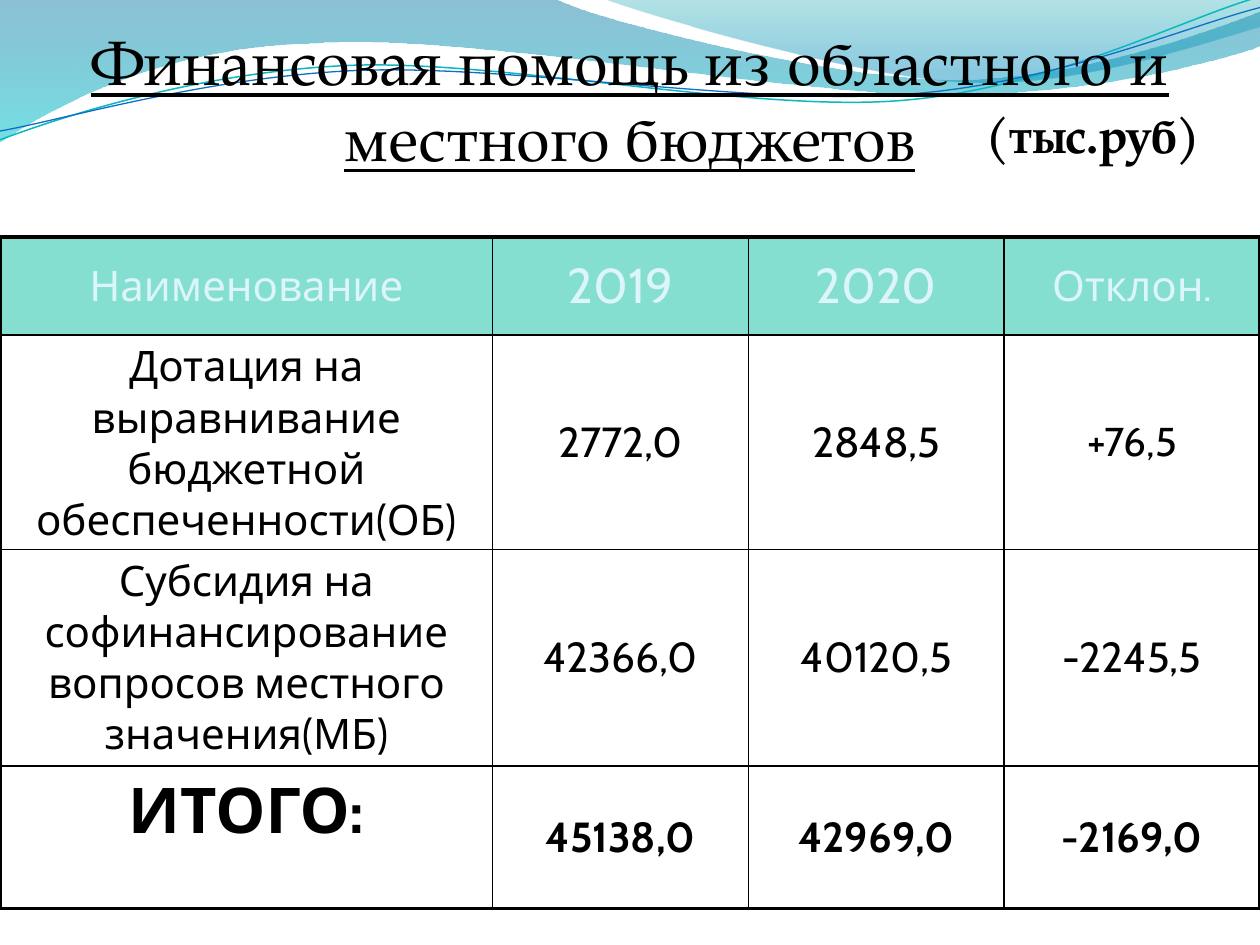
import pptx
import pptx.dml.color
import pptx.enum.text
import pptx.oxml
import pptx.oxml.ns
import pptx.util
from pptx.util import Inches, Pt

SERIF, SANS = "TeX Gyre Pagella", "Cabin"
TITLE = "Финансовая помощь из областного и местного бюджетов"
UNITS = "(тыс.руб)"
COLUMN_WIDTHS = [3.91, 2.03, 2.03, 2.03]
ROW_HEIGHTS = [0.78, 1.70, 1.72, 1.13]
ROWS = [
    ["Наименование", "2019", "2020", "Отклон."],
    ["Дотация на выравнивание бюджетной обеспеченности(ОБ)", "2772,0", "2848,5", "+76,5"],
    ["Субсидия на софинансирование вопросов местного значения(МБ)", "42366,0", "40120,5", "-2245,5"],
    ["ИТОГО:", "45138,0", "42969,0", "-2169,0"],
]
SPECIAL_SIZES = {(0, 1): 28, (0, 2): 28, (1, 3): 23, (3, 0): 36}

# Outlines: a pair is a corner, six numbers are a Bezier segment.
# Gradient stops: position, colour, opacity in percent.
BANDS = [
    ([(0, 0), (4.4, -0.01), (4.76, 0.17, 6.64, 0.63, 7.58, 0.63),
      (8.53, 0.63, 9.58, 0.26, 10, 0.09), (10.01, 0.36),
      (9.83, 0.44, 8.7, 0.76, 7.46, 0.75), (6.22, 0.75, 3.82, 0.28, 2.57, 0.34),
      (1.29, 0.36, 0.46, 0.83, -0.01, 1.13), (0, 0)],
     [(0, "0074A1", 45), (1, "00C6CF", 55)]),
    ([(4.79, -0.01), (5.09, 0.11, 6.82, 0.62, 7.69, 0.65),
      (8.56, 0.69, 9.61, 0.32, 10, 0.21), (10, 0), (4.79, -0.01)],
     [(0, "00A1A9", 30), (0.8, "008BBF", 45)]),
]
STRANDS = [
    ([(0, 1.11), (0.48, 0.93, 1.58, 0.57, 2.77, 0.52), (3.95, 0.47, 5.93, 0.89, 7.13, 0.8),
      (8.33, 0.71, 9.38, 0.15, 9.98, -0.02)], "0AB8BF", 0.85),
    ([(0, 1.04), (0.47, 0.96, 1.64, 0.61, 2.83, 0.56), (4.03, 0.51, 5.97, 0.84, 7.17, 0.75),
      (8.36, 0.67, 9.41, 0.21, 10, 0.06)], "0F6FC6", 0.75),
]


def rgb(value):
    return pptx.dml.color.RGBColor.from_string(value)


def add_curve(slide, outline, close):
    """Build a freeform on all points, then join each three of a segment to a Bezier."""
    points = [(round(segment[i] * 1000), round(segment[i + 1] * 1000))
              for segment in outline for i in range(0, len(segment), 2)]
    builder = slide.shapes.build_freeform(*points[0], scale=Inches(1) / 1000)
    builder.add_line_segments(points[1:], close=close)
    shape = builder.convert_to_shape()
    shape.shadow.inherit = False
    lines = iter(list(shape._element.iter(pptx.oxml.ns.qn("a:lnTo"))))
    for segment in outline[1:]:
        first = next(lines)
        if len(segment) == 6:
            curve = pptx.oxml.parse_xml(f'<a:cubicBezTo {pptx.oxml.ns.nsdecls("a")}/>')
            first.addprevious(curve)
            for line in (first, next(lines), next(lines)):
                curve.append(line[0])
                line.getparent().remove(line)
    return shape


def add_band(slide, outline, stops):
    shape = add_curve(slide, outline, True)
    shape.line.fill.background()
    shape.fill.gradient()
    shape.fill.gradient_angle = 270
    for stop, (position, color, _) in zip(shape.fill.gradient_stops, stops):
        stop.position = position
        stop.color.rgb = rgb(color)
    colors = list(shape._element.spPr.iter(pptx.oxml.ns.qn("a:srgbClr")))
    for element, (_, _, opacity) in zip(colors, stops):
        element.append(pptx.oxml.parse_xml(
            f'<a:alpha {pptx.oxml.ns.nsdecls("a")} val="{opacity * 1000}"/>'))


def add_strand(slide, outline, color, width):
    shape = add_curve(slide, outline, False)
    shape.fill.background()
    shape.line.color.rgb = rgb(color)
    shape.line.width = Pt(width)


def style_text(frame, text, font, size, color="000000", bold=False, underline=False):
    frame.word_wrap = True
    paragraph = frame.paragraphs[0]
    paragraph.text = text
    paragraph.alignment = pptx.enum.text.PP_ALIGN.CENTER
    paragraph.font.name = font
    paragraph.font.size = Pt(size)
    paragraph.font.color.rgb = rgb(color)
    paragraph.font.bold = bold
    paragraph.font.underline = underline


def add_text(slide, box, text, size, **style):
    shape = slide.shapes.add_textbox(*map(Inches, box))
    style_text(shape.text_frame, text, SERIF, size, **style)


def set_borders(cell, widths):
    properties = cell._tc.get_or_add_tcPr()
    for side, width in widths.items():
        properties.append(pptx.oxml.parse_xml(
            f'<a:ln{side} {pptx.oxml.ns.nsdecls("a")} w="{Pt(width)}"><a:solidFill>'
            f'<a:srgbClr val="000000"/></a:solidFill></a:ln{side}>'))


def add_budget_table(slide):
    last_row, last_column = len(ROWS) - 1, len(COLUMN_WIDTHS) - 1
    table = slide.shapes.add_table(
        len(ROWS), len(COLUMN_WIDTHS), 0, Inches(1.88),
        Inches(sum(COLUMN_WIDTHS)), Inches(sum(ROW_HEIGHTS))).table
    table.first_row = table.horz_banding = False
    for column, width in zip(table.columns, COLUMN_WIDTHS):
        column.width = Inches(width)
    for row, height in zip(table.rows, ROW_HEIGHTS):
        row.height = Inches(height)
    for r, values in enumerate(ROWS):
        for c, value in enumerate(values):
            cell = table.cell(r, c)
            header = r == 0
            edges = {"L": c == 0, "R": c == last_column, "T": header, "B": r == last_row}
            set_borders(cell, {side: 2.25 if outer else 1 for side, outer in edges.items()})
            if header:
                cell.fill.solid()
                cell.fill.fore_color.rgb = rgb("85DFD0")
                cell.margin_left = cell.margin_right = cell.margin_top = cell.margin_bottom = 0
            else:
                cell.fill.background()
            if header or c > 0:
                cell.vertical_anchor = pptx.enum.text.MSO_ANCHOR.MIDDLE
            style_text(cell.text_frame, value, SANS, SPECIAL_SIZES.get((r, c), 24),
                       color="DBF5F9" if header else "000000", bold=r == last_row)


def main():
    presentation = pptx.Presentation()
    presentation.slide_width, presentation.slide_height = Inches(10), Inches(7.5)
    slide = presentation.slides.add_slide(presentation.slide_layouts[6])
    for band in BANDS:
        add_band(slide, *band)
    for strand in STRANDS:
        add_strand(slide, *strand)
    add_text(slide, (0, 0.13, 10, 1.31), TITLE, 36, underline=True)
    add_budget_table(slide)
    add_text(slide, (7.66, 0.78, 2.03, 0.57), UNITS, 28, bold=True)
    presentation.save("out.pptx")


if __name__ == "__main__":
    main()
